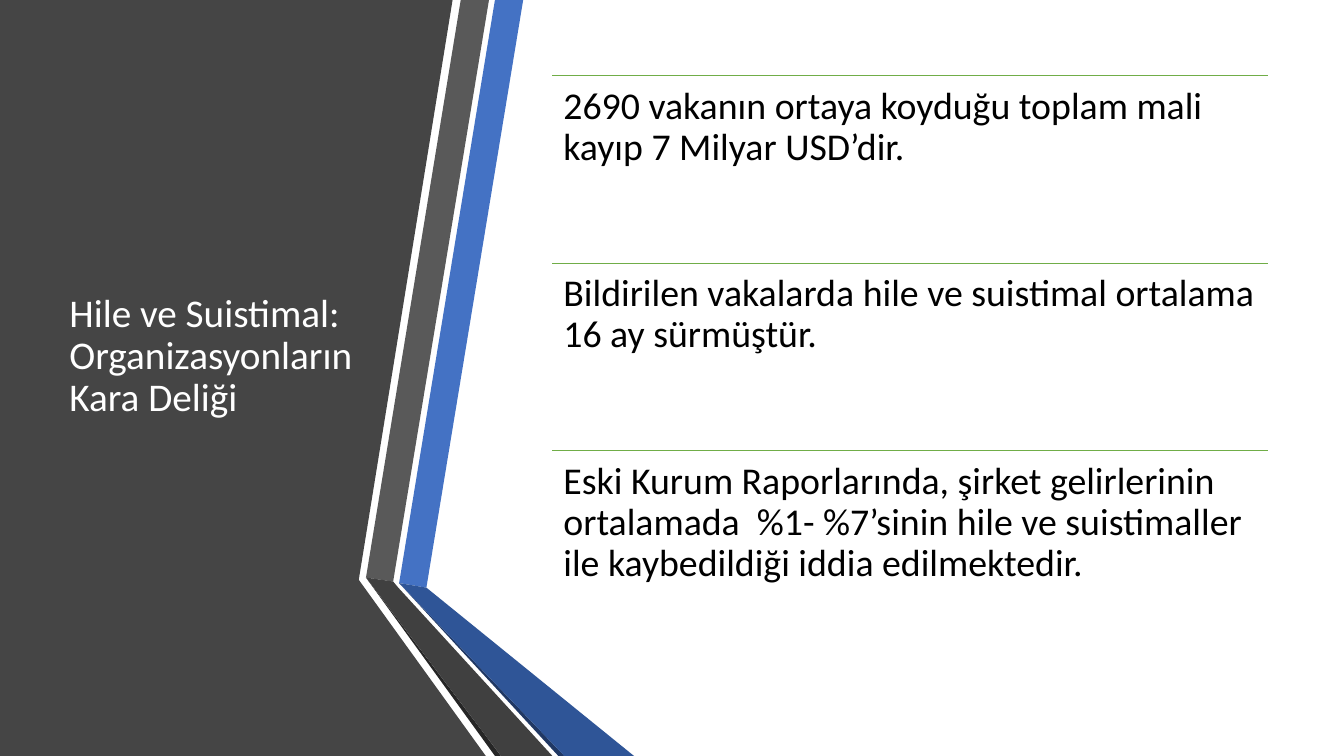
from dataclasses import dataclass

from lxml.etree import SubElement
from pptx import Presentation
from pptx.dml.color import RGBColor
from pptx.enum.shapes import MSO_CONNECTOR
from pptx.enum.text import MSO_ANCHOR, PP_ALIGN
from pptx.oxml.ns import qn
from pptx.slide import Slide
from pptx.util import Emu, Inches, Pt

WIDTH, HEIGHT = Inches(13.333), Inches(7.5)
Point = tuple[float, float]


@dataclass(frozen=True)
class Theme:
    font: str = "Calibri"
    title_size: float = 28
    body_size: float = 27
    line_spacing: float = 0.9
    rule_width: float = 0.5
    white: str = "FFFFFF"
    black: str = "000000"
    panel: str = "454545"
    blue: str = "4472C4"
    blue_fold: str = "2F5597"
    blue_edge: str = "203864"
    grey: str = "595959"
    grey_fold: str = "404040"
    grey_edge: str = "262626"
    rule: str = "70AD47"


THEME = Theme()


@dataclass(frozen=True)
class Facet:
    """A filled outline whose corners are percentages of the slide's size."""
    fill: str
    corners: tuple[Point, ...]


@dataclass(frozen=True)
class TextBlock:
    """A text box placed by percentages of the slide's size."""
    left: float
    top: float
    width: float
    height: float
    text: str
    size: float
    color: str
    inset: float
    anchor: MSO_ANCHOR


# Corners shared by neighbouring facets
GREY_KNEE = (27.23, 76.4)
GREY_INNER = (29.25, 76.93)
GREY_FOOT = (37.28, 100)
BLUE_KNEE = (29.7, 77.13)
BLUE_INNER = (31.73, 77.73)
BLUE_FOOT = (42, 100)

FACETS = (
    Facet(THEME.panel, ((0, 0), (33.68, 0), (26.7, 76.7), (36.15, 100), (0, 100))),
    Facet(THEME.blue, (BLUE_KNEE, BLUE_INNER, (38.93, 0), (36.83, 0))),
    Facet(THEME.grey, ((36.38, 0), (34.28, 0), GREY_KNEE, GREY_INNER)),
    Facet(THEME.grey_edge, (GREY_KNEE, (36.83, 100), GREY_FOOT)),
    Facet(THEME.blue_edge, (BLUE_KNEE, (41.55, 100), BLUE_FOOT)),
    Facet(THEME.blue_fold, (BLUE_KNEE, BLUE_FOOT, (47.18, 100), BLUE_INNER)),
    Facet(THEME.grey_fold, ((41.1, 100), (29.63, 77.73), GREY_INNER, GREY_KNEE, GREY_FOOT)),
)

TITLE = TextBlock(4.43, 10, 22.8, 74.4, "Hile ve Suistimal: Organizasyonların Kara Deliği",
                  THEME.title_size, THEME.white, 0.1, MSO_ANCHOR.MIDDLE)

LIST_LEFT, LIST_TOP, LIST_WIDTH, ROW_HEIGHT = 41.1, 10, 53.25, 24.8
FINDINGS = (
    "2690 vakanın ortaya koyduğu toplam mali kayıp 7 Milyar USD’dir.",
    "Bildirilen vakalarda hile ve suistimal ortalama 16 ay sürmüştür.",
    "Eski Kurum Raporlarında, şirket gelirlerinin ortalamada  %1- %7’sinin "
    "hile ve suistimaller ile kaybedildiği iddia edilmektedir.",
)


def across(percent: float) -> Emu:
    return Emu(round(WIDTH * percent / 100))


def down(percent: float) -> Emu:
    return Emu(round(HEIGHT * percent / 100))


def apply_format(target: object, values: dict[str, object]) -> None:
    for name, value in values.items():
        setattr(target, name, value)


def add_facet(s: Slide, facet: Facet) -> None:
    start, *rest = [(across(x), down(y)) for x, y in facet.corners]
    builder = s.shapes.build_freeform(*start)
    builder.add_line_segments(rest, close=True)
    sp = builder.convert_to_shape()
    sp.shadow.inherit = False
    sp.fill.solid()
    sp.fill.fore_color.rgb = RGBColor.from_string(facet.fill)
    sp.line.fill.background()


def add_text(s: Slide, block: TextBlock) -> None:
    sp = s.shapes.add_textbox(across(block.left), down(block.top),
                              across(block.width), down(block.height))
    tf = sp.text_frame
    sides = ("margin_left", "margin_top", "margin_right", "margin_bottom")
    apply_format(tf, {"word_wrap": True, "vertical_anchor": block.anchor,
                      **dict.fromkeys(sides, Inches(block.inset))})
    p = tf.paragraphs[0]
    apply_format(p, {"alignment": PP_ALIGN.LEFT, "line_spacing": THEME.line_spacing})
    r = p.add_run()
    r.text = block.text
    apply_format(r.font, {"name": THEME.font, "size": Pt(block.size)})
    r.font.color.rgb = RGBColor.from_string(block.color)


def add_rule(s: Slide, top: float) -> None:
    """Draw the thin line above a finding."""
    y = down(top)
    line = s.shapes.add_connector(MSO_CONNECTOR.STRAIGHT, across(LIST_LEFT), y,
                                  across(LIST_LEFT + LIST_WIDTH), y)
    line.line.width = Pt(THEME.rule_width)
    line.line.color.rgb = RGBColor.from_string(THEME.rule)
    SubElement(line._element.spPr, qn("a:effectLst"))


def main() -> None:
    prs = Presentation()
    apply_format(prs, {"slide_width": WIDTH, "slide_height": HEIGHT})
    s = prs.slides.add_slide(prs.slide_layouts[6])
    for facet in FACETS:
        add_facet(s, facet)
    add_text(s, TITLE)
    for row, finding in enumerate(FINDINGS):
        top = LIST_TOP + row * ROW_HEIGHT
        add_rule(s, top)
        add_text(s, TextBlock(LIST_LEFT, top, LIST_WIDTH, ROW_HEIGHT, finding,
                              THEME.body_size, THEME.black, 0.11, MSO_ANCHOR.TOP))
    prs.save("out.pptx")


if __name__ == "__main__":
    main()
